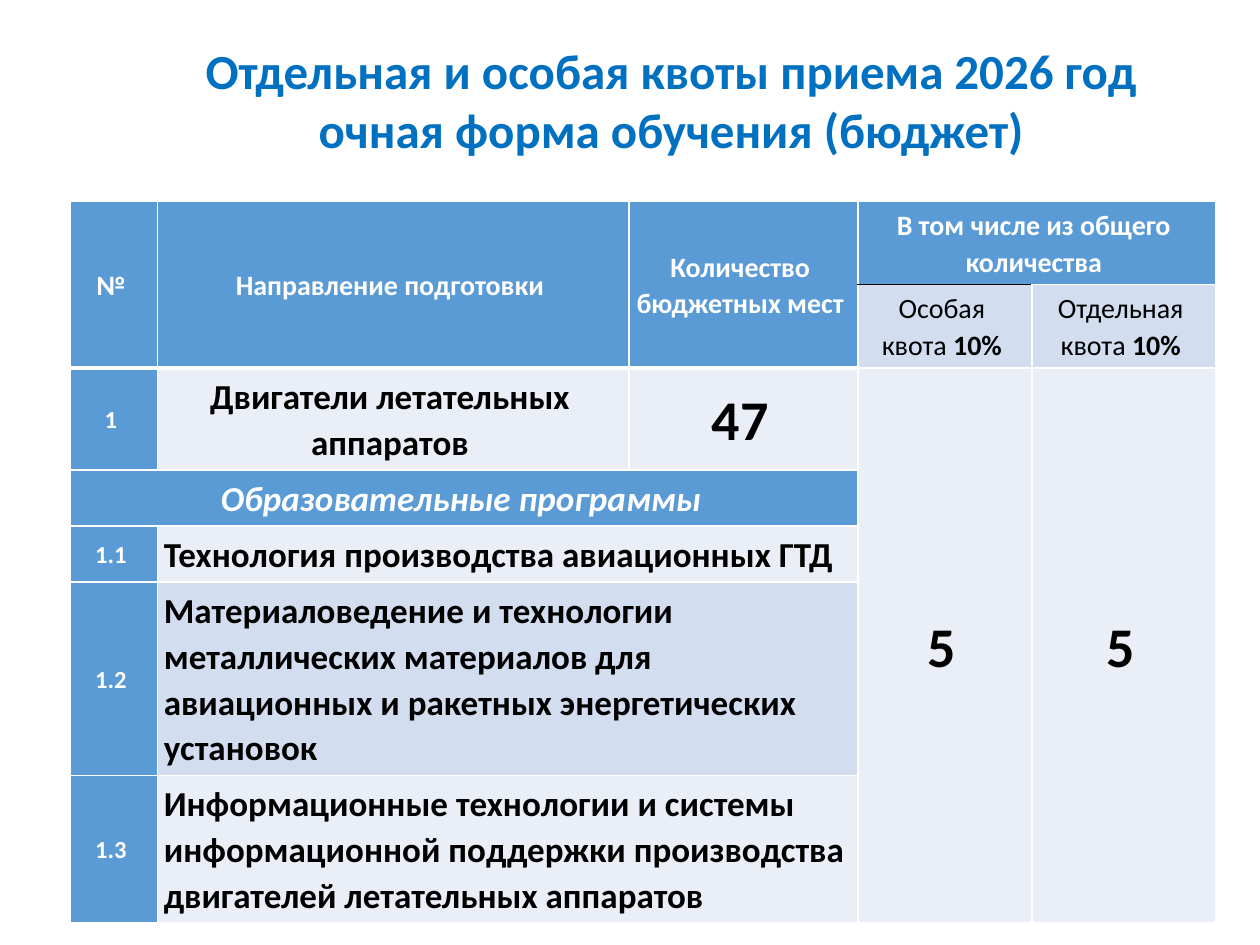
from lxml import etree
from pptx import Presentation
from pptx.dml.color import RGBColor
from pptx.enum.text import MSO_ANCHOR, MSO_AUTO_SIZE, PP_ALIGN
from pptx.oxml.ns import qn
from pptx.util import Pt

CENTER, LEFT = PP_ALIGN.CENTER, PP_ALIGN.LEFT
TOP, MIDDLE = MSO_ANCHOR.TOP, MSO_ANCHOR.MIDDLE
NO_FIT = MSO_AUTO_SIZE.NONE
BLUE, PALE, LIGHT = "5B9BD5", "D2DEEF", "EAEFF7"
WHITE, BLACK, TITLE_BLUE = "FFFFFF", "000000", "0070C0"


def color(value):
    return RGBColor.from_string(value)


def add_span(para, text, size, ink, bold=True, italic=False):
    span = para.add_run()
    span.text = text
    look = {"name": "Calibri", "size": Pt(size), "bold": bold, "italic": italic}
    for name, value in look.items():
        setattr(span.font, name, value)
    span.font.color.rgb = color(ink)


deck = Presentation()
deck.slide_width, deck.slide_height = Pt(720), Pt(540)
page = deck.slides.add_slide(deck.slide_layouts[5])

title = page.shapes.title
place = {"left": 107.3, "top": 19.4, "width": 552.2, "height": 74.9}
for name, value in place.items():
    setattr(title, name, Pt(value))
frame = title.text_frame
frame.word_wrap = False
frame.auto_size = NO_FIT
frame.vertical_anchor = TOP
title_lines = ["Отдельная и особая квоты приема 2026 год", "очная форма обучения (бюджет)"]
for index, line in enumerate(title_lines):
    para = frame.add_paragraph() if index else frame.paragraphs[0]
    para.alignment = CENTER
    add_span(para, line, 28, TITLE_BLUE)

widths = [49.7, 269.3, 131, 99.4, 105.1]
heights = [46, 46.5, 57, 31.5, 31.5, 109, 82]
table = page.shapes.add_table(
    len(heights), len(widths), Pt(40.3), Pt(115), Pt(sum(widths)), Pt(sum(heights))
).table
for column, width in zip(table.columns, widths):
    column.width = Pt(width)
for row, height in zip(table.rows, heights):
    row.height = Pt(height)

for row in range(len(heights)):
    for col in range(len(widths)):
        edges = dict.fromkeys(("lnL", "lnR", "lnT", "lnB"), (WHITE, 1))
        if col < 3 and row < 2:
            edges["lnB"] = (WHITE, 3)
        if col < 3 and row == 2:
            edges["lnT"] = (WHITE, 3)
        if (row, col) == (0, 3):
            edges["lnB"] = (BLACK, 1)
        if (row, col) == (1, 3):
            edges["lnT"] = (BLACK, 1)
        properties = table.cell(row, col)._tc.get_or_add_tcPr()
        for tag, (ink, weight) in edges.items():
            line = etree.SubElement(properties, qn(f"a:{tag}"), w=str(Pt(weight)))
            fill = etree.SubElement(line, qn("a:solidFill"))
            etree.SubElement(fill, qn("a:srgbClr"), val=ink)

programs = [
    ("1.1", "Технология производства авиационных ГТД", LIGHT),
    ("1.2", "Материаловедение и технологии металлических материалов для "
            "авиационных и ракетных энергетических установок", PALE),
    ("1.3", "Информационные технологии и системы информационной поддержки "
            "производства двигателей летательных аппаратов", LIGHT),
]
cells = [
    (0, 0, 2, 1, BLUE, CENTER, [("№", 16, WHITE)]),
    (0, 1, 2, 1, BLUE, CENTER, [("Направление подготовки", 16, WHITE)]),
    (0, 2, 2, 1, BLUE, CENTER, [("Количество бюджетных мест", 16, WHITE)]),
    (0, 3, 1, 2, BLUE, CENTER, [("В том числе из общего количества", 16, WHITE)]),
    (2, 0, 1, 1, BLUE, CENTER, [("1", 14, WHITE)]),
    (2, 1, 1, 1, LIGHT, CENTER, [("Двигатели летательных аппаратов", 20, BLACK)]),
    (2, 2, 1, 1, LIGHT, CENTER, [("47", 32, BLACK)]),
    (3, 0, 1, 3, BLUE, CENTER, [("Образовательные программы", 20, WHITE, True, True)]),
]
for col, quota in enumerate(["Особая квота ", "Отдельная квота "], 3):
    spans = [(quota, 16, BLACK, False), ("10%", 16, BLACK)]
    cells.append((1, col, 1, 1, PALE, CENTER, spans))
    cells.append((2, col, 5, 1, LIGHT, CENTER, [("5", 32, BLACK)]))
for row, (number, name, shade) in enumerate(programs, 4):
    cells.append((row, 0, 1, 1, BLUE, CENTER, [(number, 14, WHITE)]))
    cells.append((row, 1, 1, 2, shade, LEFT, [(name, 20, BLACK)]))

cell_look = {
    "margin_left": Pt(3.6), "margin_right": Pt(7.2), "margin_top": Pt(2.9),
    "margin_bottom": Pt(2.9), "vertical_anchor": MIDDLE,
}
for row, col, tall, wide, shade, align, spans in cells:
    cell = table.cell(row, col)
    if tall * wide > 1:
        cell.merge(table.cell(row + tall - 1, col + wide - 1))
    for name, value in cell_look.items():
        setattr(cell, name, value)
    cell.fill.solid()
    cell.fill.fore_color.rgb = color(shade)
    para = cell.text_frame.paragraphs[0]
    para.alignment = align
    para.line_spacing = 1.07
    for span in spans:
        add_span(para, *span)

deck.save("out.pptx")
